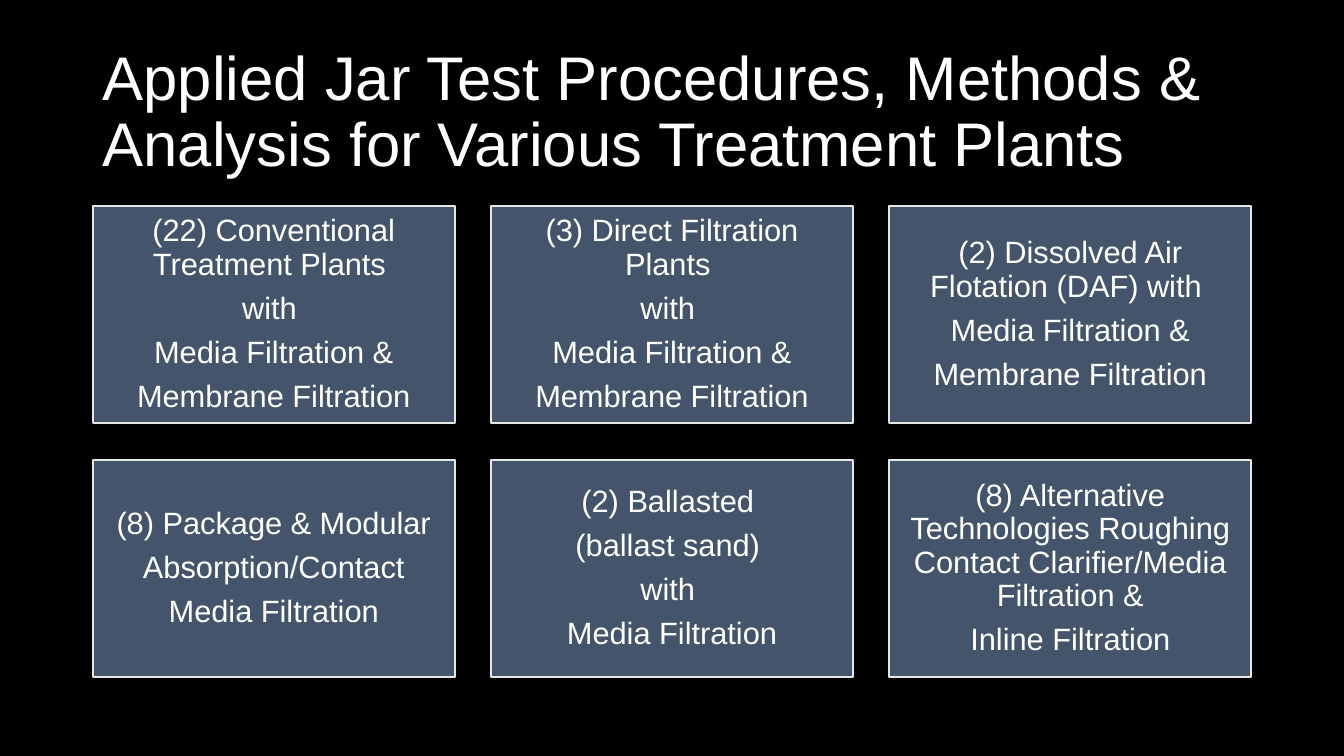
import pptx
import pptx.util
import pptx.dml.color
import pptx.enum.shapes
import pptx.enum.text
from dataclasses import dataclass

Inches, Pt = pptx.util.Inches, pptx.util.Pt
RGB = pptx.dml.color.RGBColor.from_string

TITLE = "Applied Jar Test Procedures, Methods & Analysis for Various Treatment Plants"
PLANTS = [
    ["(22) Conventional Treatment Plants ", "with ", "Media Filtration &", "Membrane Filtration"],
    ["(3) Direct Filtration Plants ", "with ", "Media Filtration &", "Membrane Filtration"],
    ["(2) Dissolved Air Flotation (DAF) with ", "Media Filtration &", "Membrane Filtration"],
    ["(8) Package & Modular", "Absorption/Contact", "Media Filtration"],
    ["(2) Ballasted ", "(ballast sand) ", "with ", "Media Filtration"],
    ["(8) Alternative Technologies Roughing Contact Clarifier/Media Filtration &",
     "Inline Filtration"],
]


@dataclass(frozen=True)
class Theme:
    font: str = "Arial"
    background: str = "000000"
    text: str = "FFFFFF"
    card: str = "44546A"
    border: str = "E7E6E6"
    title_size: int = 44
    card_size: int = 22


THEME = Theme()
COLUMNS = 3
LEFT, TOP = 0.92, 2.04
CARD_W, CARD_H, GAP = 3.59, 2.16, 0.36


def write(tf, lines, size, align, space_after=0):
    tf.word_wrap = True
    tf.vertical_anchor = pptx.enum.text.MSO_ANCHOR.MIDDLE
    tf.text = "\n".join(lines)
    for p in tf.paragraphs:
        p.alignment = align
        p.line_spacing = 0.9
        p.space_after = Pt(space_after)
        for r in p.runs:
            r.font.name = THEME.font
            r.font.size = Pt(size)
            r.font.color.rgb = RGB(THEME.text)


def add_card(s, index, lines):
    row, col = divmod(index, COLUMNS)
    sp = s.shapes.add_shape(
        pptx.enum.shapes.MSO_SHAPE.RECTANGLE,
        Inches(LEFT + col * (CARD_W + GAP)), Inches(TOP + row * (CARD_H + GAP)),
        Inches(CARD_W), Inches(CARD_H))
    sp.shadow.inherit = False
    sp.fill.solid()
    sp.fill.fore_color.rgb = RGB(THEME.card)
    sp.line.color.rgb = RGB(THEME.border)
    sp.line.width = Pt(1.5)
    tf = sp.text_frame
    tf.margin_left = tf.margin_right = tf.margin_top = tf.margin_bottom = Inches(0.09)
    write(tf, lines, THEME.card_size, pptx.enum.text.PP_ALIGN.CENTER,
          space_after=0.35 * THEME.card_size)


def main():
    prs = pptx.Presentation()
    prs.slide_width, prs.slide_height = Inches(13.33), Inches(7.5)
    s = prs.slides.add_slide(prs.slide_layouts[6])
    s.background.fill.solid()
    s.background.fill.fore_color.rgb = RGB(THEME.background)

    title = s.shapes.add_textbox(Inches(LEFT), Inches(0.4), Inches(11.5), Inches(1.45))
    write(title.text_frame, [TITLE], THEME.title_size, pptx.enum.text.PP_ALIGN.LEFT)
    for index, lines in enumerate(PLANTS):
        add_card(s, index, lines)
    prs.save("out.pptx")


if __name__ == "__main__":
    main()
